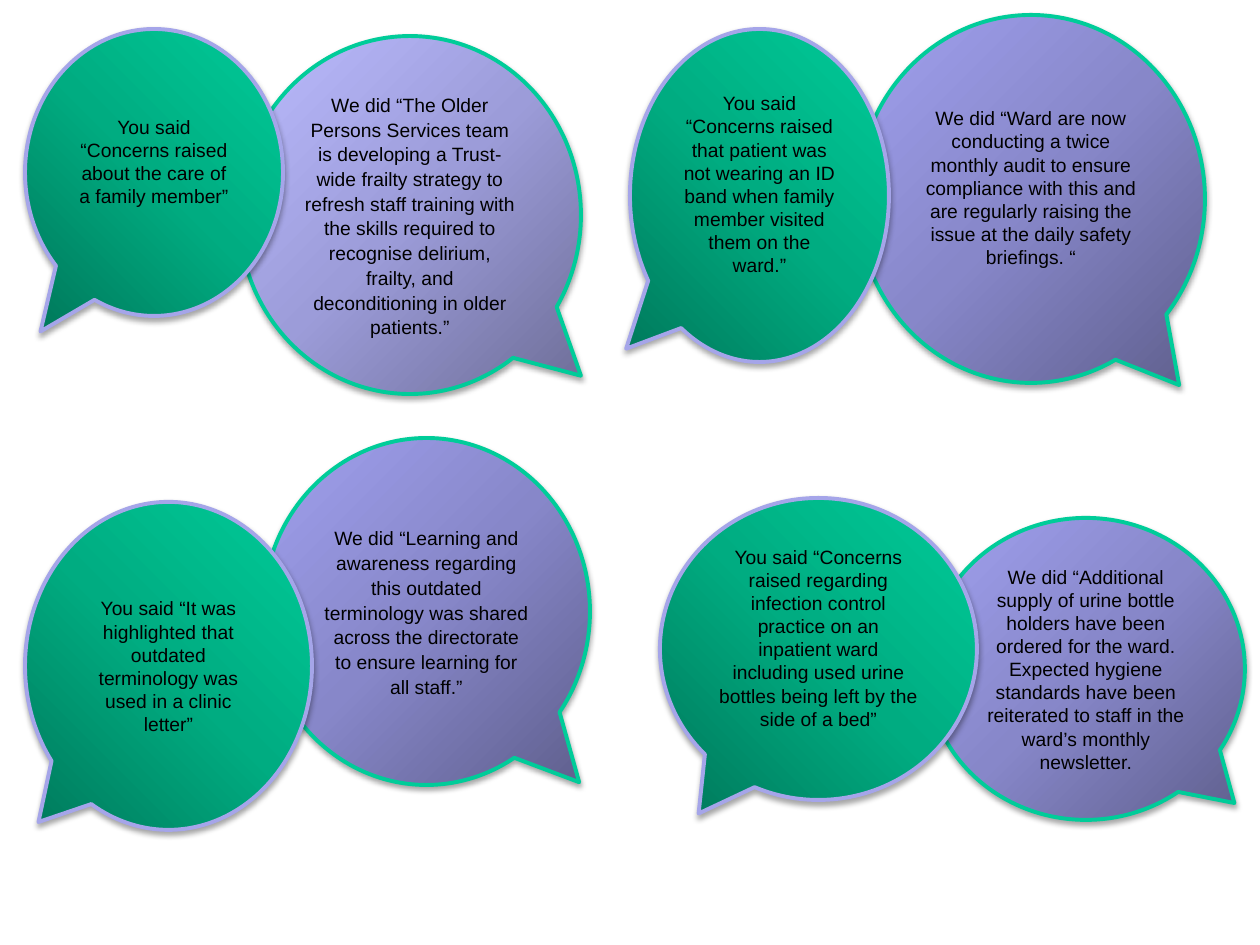
import pptx
import pptx.dml.color
import pptx.enum.shapes
import pptx.enum.text
import pptx.oxml
import pptx.oxml.ns
import pptx.util

PX = 914400 // 126  # EMU per pixel
SLIDE = (1260, 945)

THEME = {
    "font": "Arial", "size": 11, "text": "000000", "line_width": 2.25,
    # gradient from the focus corner outwards, focus rectangle, outline
    "said": (("00795B", "00AC81", "00CC99"), "l='0' t='100000' r='100000' b='0'", "A5A5E9"),
    "did": (("5F5F8D", "8787C9", "A0A0EE"), "l='100000' t='100000' r='0' b='0'", "00CC99"),
    "did_light": (("6E6E98", "9C9CD9", "BBBBFF"), "l='100000' t='100000' r='0' b='0'", "00CC99"),
}
INSET = 6
RAISED = 29       # bottom inset that lifts the text by half a line
LOOSE = (1.07, 8)  # line spacing, space after
PLAIN = (1, 0)

# style, (left, top, width, height), tail tip, bottom inset, spacing, text
BUBBLES = [
    ("did", (927, 518, 318, 302), (0.467, 0.444), INSET, PLAIN,
     "We did “Additional supply of urine bottle holders have been ordered for the ward. "
     "Expected hygiene standards have been reiterated to staff in the ward’s monthly newsletter."),
    ("did", (263, 438, 327, 347), (0.467, 0.492), INSET, LOOSE,
     "We did “Learning and awareness regarding this outdated terminology was shared "
     "across the directorate to ensure learning for all staff.”"),
    ("said", (25, 502, 287, 328), (-0.453, 0.476), INSET, PLAIN,
     "You said “It was highlighted that outdated terminology was used in a clinic letter”"),
    ("did_light", (239, 36, 342, 358), (0.5, 0.449), INSET, LOOSE,
     "We did “The Older Persons Services team is developing a Trust-wide frailty strategy "
     "to refresh staff training with the skills required to recognise delirium, frailty, "
     "and deconditioning in older patients.”"),
    ("did", (857, 15, 348, 368), (0.426, 0.506), RAISED, PLAIN,
     "We did “Ward are now conducting a twice monthly audit to ensure compliance with this "
     "and are regularly raising the issue at the daily safety briefings. “"),
    ("said", (660, 498, 317, 302), (-0.378, 0.545), RAISED, PLAIN,
     "You said “Concerns raised regarding infection control practice on an inpatient ward "
     "including used urine bottles being left by the side of a bed”"),
    ("said", (630, 29, 259, 333), (-0.515, 0.46), RAISED, PLAIN,
     "You said “Concerns raised that patient was not wearing an ID band when family member "
     "visited them on the ward.”"),
    ("said", (25, 29, 258, 287), (-0.44, 0.554), RAISED, PLAIN,
     "You said “Concerns raised about the care of a family member”"),
]

NS = pptx.oxml.ns.nsdecls("a")
SHADOW = (f"<a:effectLst {NS}><a:outerShdw blurRad='40000' dist='23000' dir='5400000' "
          "rotWithShape='0'><a:srgbClr val='000000'><a:alpha val='35000'/></a:srgbClr>"
          "</a:outerShdw></a:effectLst>")


def rgb(value):
    return pptx.dml.color.RGBColor.from_string(value)


def radial_fill(colors, focus):
    stops = "".join(f"<a:gs pos='{i * 50000}'><a:srgbClr val='{c}'/></a:gs>"
                    for i, c in enumerate(colors))
    return pptx.oxml.parse_xml(
        f"<a:gradFill {NS} rotWithShape='1'><a:gsLst>{stops}</a:gsLst>"
        f"<a:path path='circle'><a:fillToRect {focus}/></a:path></a:gradFill>")


def add_bubble(slide, style, box, tail, bottom, spacing, text):
    colors, focus, outline = THEME[style]
    sp = slide.shapes.add_shape(
        pptx.enum.shapes.MSO_SHAPE.OVAL_CALLOUT, *(v * PX for v in box))
    sp.adjustments[0], sp.adjustments[1] = tail
    props = sp._element.spPr
    props.append(radial_fill(colors, focus))
    sp.line.color.rgb = rgb(outline)
    sp.line.width = pptx.util.Pt(THEME["line_width"])
    props.append(pptx.oxml.parse_xml(SHADOW))

    tf = sp.text_frame
    tf.word_wrap = True
    tf.vertical_anchor = pptx.enum.text.MSO_ANCHOR.MIDDLE
    tf.margin_bottom = bottom * PX
    tf.text = text
    p = tf.paragraphs[0]
    p.alignment = pptx.enum.text.PP_ALIGN.CENTER
    p.line_spacing = spacing[0]
    p.space_after = pptx.util.Pt(spacing[1])
    font = p.runs[0].font
    font.name = THEME["font"]
    font.size = pptx.util.Pt(THEME["size"])
    font.color.rgb = rgb(THEME["text"])


def main():
    prs = pptx.Presentation()
    prs.slide_width, prs.slide_height = (v * PX for v in SLIDE)
    slide = prs.slides.add_slide(prs.slide_layouts[6])
    for bubble in BUBBLES:
        add_bubble(slide, *bubble)
    prs.save("out.pptx")


if __name__ == "__main__":
    main()
